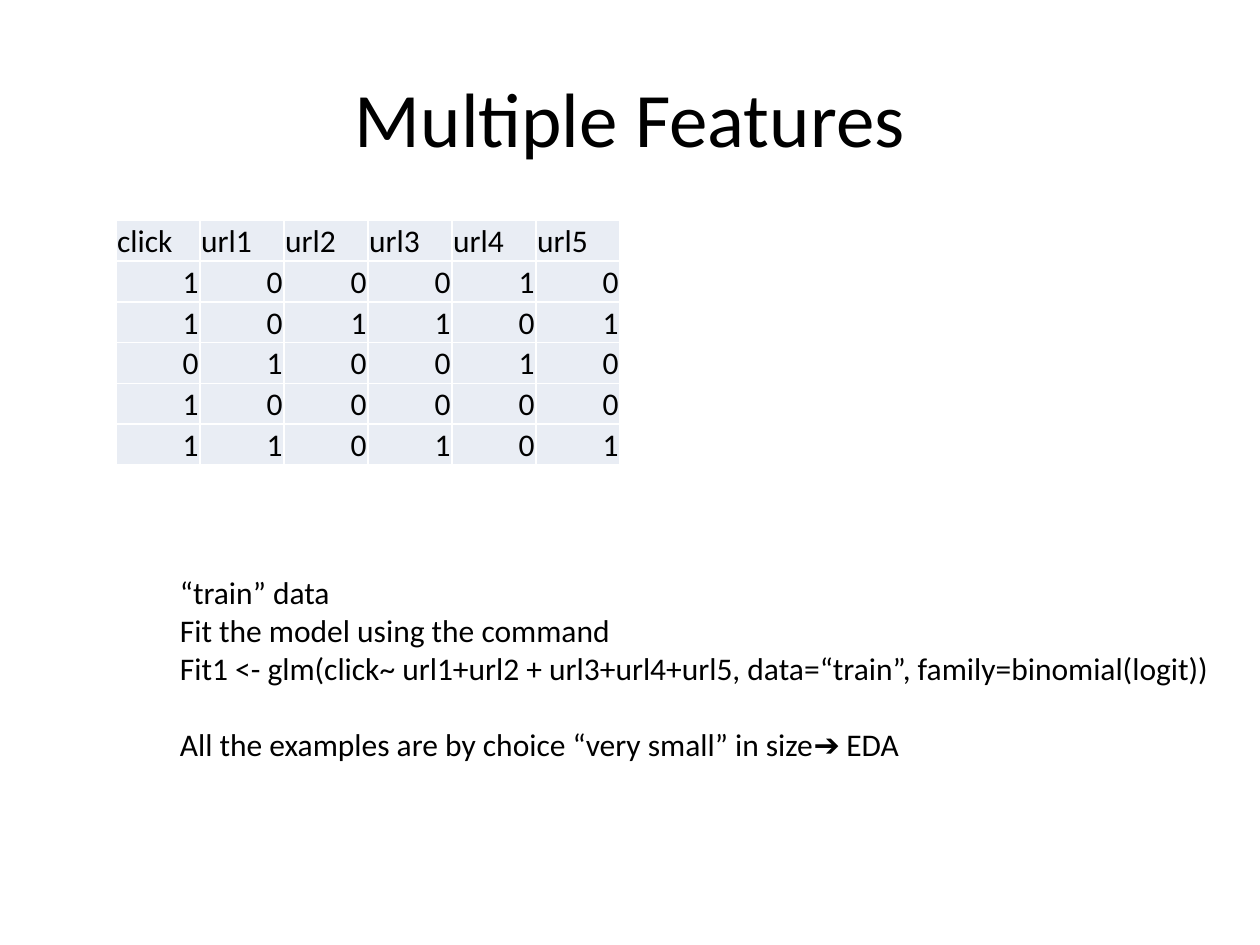
from dataclasses import dataclass

from lxml.etree import SubElement
from pptx import Presentation
from pptx.dml.color import RGBColor
from pptx.enum.text import MSO_ANCHOR, MSO_AUTO_SIZE, PP_ALIGN
from pptx.oxml.ns import qn
from pptx.slide import Slide
from pptx.table import _Cell
from pptx.text.text import _Paragraph
from pptx.util import Inches, Pt


@dataclass(frozen=True)
class Theme:
    font: str = "Calibri"
    ink: str = "000000"
    cell: str = "E9EDF4"
    border: str = "FFFFFF"
    title_size: int = 44
    body_size: int = 18
    border_width: int = 1


@dataclass(frozen=True)
class Area:
    left: float
    top: float
    width: float
    height: float

    def lengths(self) -> tuple[Inches, ...]:
        return tuple(map(Inches, (self.left, self.top, self.width, self.height)))


@dataclass(frozen=True)
class Line:
    text: str
    space_before: int = 0


THEME = Theme()
TITLE_AREA = Area(0.5, 0.3, 9, 1.25)
CLICKS_AREA = Area(0.92, 1.75, 4, 1.94)
NOTES_AREA = Area(1.33, 4.5, 8.46, 1.62)

CLICK_ROWS = (
    ("click", "url1", "url2", "url3", "url4", "url5"),
    (1, 0, 0, 0, 1, 0),
    (1, 0, 1, 1, 0, 1),
    (0, 1, 0, 0, 1, 0),
    (1, 0, 0, 0, 0, 0),
    (1, 1, 0, 1, 0, 1),
)

MODEL_LINES = (
    Line("“train” data"),
    Line("Fit the model using the command"),
    Line("Fit1 <- glm(click~ url1+url2 + url3+url4+url5, data=“train”, family=binomial(logit))"),
    Line("All the examples are by choice “very small” in size➔ EDA", space_before=22),
)


def style(para: _Paragraph, size: int, align: PP_ALIGN = PP_ALIGN.LEFT) -> None:
    para.alignment = align
    para.font.name = THEME.font
    para.font.size = Pt(size)
    para.font.color.rgb = RGBColor.from_string(THEME.ink)


def add_borders(cell: _Cell) -> None:
    properties = cell._tc.get_or_add_tcPr()
    for side in ("a:lnL", "a:lnR", "a:lnT", "a:lnB"):
        line = SubElement(properties, qn(side), w=str(Pt(THEME.border_width)))
        fill = SubElement(line, qn("a:solidFill"))
        SubElement(fill, qn("a:srgbClr"), val=THEME.border)


def fill_cell(cell: _Cell, value: str | int) -> None:
    cell.text = str(value)
    cell.margin_left = cell.margin_right = cell.margin_top = Inches(0.01)
    cell.margin_bottom = 0
    cell.vertical_anchor = MSO_ANCHOR.BOTTOM
    align = PP_ALIGN.RIGHT if isinstance(value, int) else PP_ALIGN.LEFT
    style(cell.text_frame.paragraphs[0], THEME.body_size, align)
    add_borders(cell)
    cell.fill.solid()
    cell.fill.fore_color.rgb = RGBColor.from_string(THEME.cell)


def set_title(page: Slide, text: str, area: Area) -> None:
    title = page.shapes.title
    title.left, title.top, title.width, title.height = area.lengths()
    title.text_frame.text = text
    title.text_frame.vertical_anchor = MSO_ANCHOR.MIDDLE
    style(title.text_frame.paragraphs[0], THEME.title_size, PP_ALIGN.CENTER)


def add_click_table(page: Slide, rows: tuple[tuple, ...], area: Area) -> None:
    table = page.shapes.add_table(len(rows), len(rows[0]), *area.lengths()).table
    table.first_row = table.horz_banding = False
    for row_index, row in enumerate(rows):
        for column_index, value in enumerate(row):
            fill_cell(table.cell(row_index, column_index), value)


def add_model_text(page: Slide, lines: tuple[Line, ...], area: Area) -> None:
    frame = page.shapes.add_textbox(*area.lengths()).text_frame
    frame.word_wrap = False
    frame.auto_size = MSO_AUTO_SIZE.SHAPE_TO_FIT_TEXT
    frame.text = "\n".join(line.text for line in lines)
    for para, line in zip(frame.paragraphs, lines):
        style(para, THEME.body_size)
        para.space_before = Pt(line.space_before)


def main() -> None:
    deck = Presentation()
    deck.slide_width, deck.slide_height = Inches(10), Inches(7.5)
    page = deck.slides.add_slide(deck.slide_layouts.get_by_name("Title Only"))
    set_title(page, "Multiple Features", TITLE_AREA)
    add_click_table(page, CLICK_ROWS, CLICKS_AREA)
    add_model_text(page, MODEL_LINES, NOTES_AREA)
    deck.save("out.pptx")


if __name__ == "__main__":
    main()
